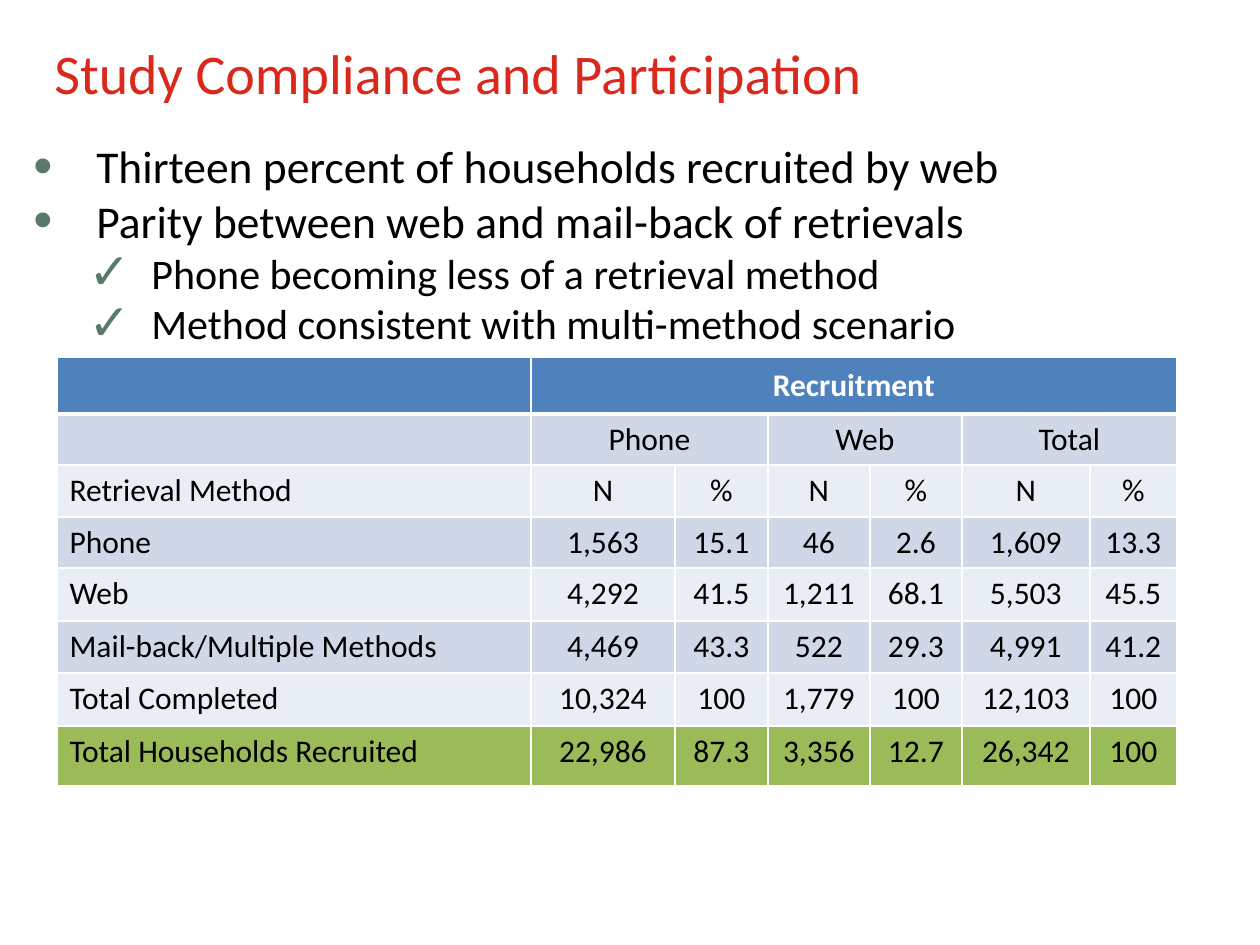
from lxml.etree import SubElement as Sub
from pptx import Presentation
from pptx.dml.color import RGBColor
from pptx.enum.text import MSO_ANCHOR as Anchor, PP_ALIGN as Align
from pptx.oxml import parse_xml
from pptx.oxml.ns import nsdecls, qn
from pptx.util import Pt

PX = 914400 / 126
RED = RGBColor(0xDA, 0x29, 0x1C)
BLACK = RGBColor(0, 0, 0)
WHITE = RGBColor(0xFF, 0xFF, 0xFF)
SAGE = RGBColor(0x59, 0x7A, 0x69)
BLUE = RGBColor(0x4F, 0x81, 0xBD)
PALE = RGBColor(0xD0, 0xD8, 0xE8)
LIGHT = RGBColor(0xE9, 0xED, 0xF4)
GREEN = RGBColor(0x9B, 0xBB, 0x59)


def px(*nums):
    """Turn pixel lengths into a list of EMU."""
    return [round(n * PX) for n in nums]


def write(para, text, size, color=BLACK, bold=False):
    run = para.add_run()
    run.text = text
    look = {"name": "Calibri", "size": Pt(size), "bold": bold}
    for key, val in look.items():
        setattr(run.font, key, val)
    run.font.color.rgb = color


prs = Presentation()
prs.slide_width, prs.slide_height = px(1260, 945)
slide = prs.slides.add_slide(prs.slide_layouts[6])

# Title
frame = slide.shapes.add_textbox(*px(42, 28, 1134, 88)).text_frame
frame.word_wrap = True
frame.vertical_anchor = Anchor.MIDDLE
write(frame.paragraphs[0], "Study Compliance and Participation", 32, RED)

# Bullets: level, text
POINTS = [
    (0, "Thirteen percent of households recruited by web"),
    (0, "Parity between web and mail-back of retrievals"),
    (1, "Phone becoming less of a retrieval method"),
    (1, "Method consistent with multi-method scenario"),
]
LEVELS = [("•", 63, 26), ("✓", 118, 24)]  # mark, indent, size
frame = slide.shapes.add_textbox(*px(21, 132, 1160, 762)).text_frame
frame.word_wrap = True
for i, (level, text) in enumerate(POINTS):
    mark, left, size = LEVELS[level]
    para = frame.add_paragraph() if i else frame.paragraphs[0]
    para.level = level
    props = para._p.get_or_add_pPr()
    margin, hang = px(left, -63)
    props.set("marL", str(margin))
    props.set("indent", str(hang))
    tint = Sub(props, qn("a:buClr"))
    Sub(tint, qn("a:srgbClr"), val=str(SAGE))
    Sub(props, qn("a:buSzPct"), val="120000")
    Sub(props, qn("a:buFont"), typeface="Arial")
    Sub(props, qn("a:buChar"), char=mark)
    write(para, text, size)

# Table
COLS = [474, 144, 93, 102, 92, 128, 87]
ROWS = [57, 51, 52, 51, 53, 52, 53, 60]
FILLS = [BLUE, PALE, LIGHT, PALE, LIGHT, PALE, LIGHT, GREEN]
DATA = [
    ["", "Recruitment", "", "", "", "", ""],
    ["", "Phone", "", "Web", "", "Total", ""],
    ["Retrieval Method", "N", "%", "N", "%", "N", "%"],
    ["Phone", "1,563", "15.1", "46", "2.6", "1,609", "13.3"],
    ["Web", "4,292", "41.5", "1,211", "68.1", "5,503", "45.5"],
    ["Mail-back/Multiple Methods", "4,469", "43.3", "522", "29.3", "4,991", "41.2"],
    ["Total Completed", "10,324", "100", "1,779", "100", "12,103", "100"],
    ["Total Households Recruited", "22,986", "87.3", "3,356", "12.7", "26,342", "100"],
]
table = slide.shapes.add_table(
    len(ROWS), len(COLS), *px(57, 357, sum(COLS), sum(ROWS))).table
for col, width in zip(table.columns, px(*COLS)):
    col.width = width
for row, height in zip(table.rows, px(*ROWS)):
    row.height = height
for r, (fill, line) in enumerate(zip(FILLS, DATA)):
    for c, text in enumerate(line):
        cell = table.cell(r, c)
        cell.fill.solid()
        cell.fill.fore_color.rgb = fill
        cell.vertical_anchor = Anchor.MIDDLE if r < 2 else Anchor.TOP
        thick = {"L": 1, "R": 1, "T": 3 if r == 1 else 1, "B": 1 if r else 3}
        for i, (side, width) in enumerate(thick.items()):
            cell._tc.get_or_add_tcPr().insert(i, parse_xml(
                f'<a:ln{side} {nsdecls("a")} w="{Pt(width)}"><a:solidFill>'
                f'<a:srgbClr val="{WHITE}"/></a:solidFill></a:ln{side}>'))
        if text:
            para = cell.text_frame.paragraphs[0]
            para.alignment = Align.CENTER if c else Align.LEFT
            write(para, text, 18, BLACK if r else WHITE, r == 0)
for r, first, last in [(0, 1, 6), (1, 1, 2), (1, 3, 4), (1, 5, 6)]:
    table.cell(r, first).merge(table.cell(r, last))

prs.save("out.pptx")
